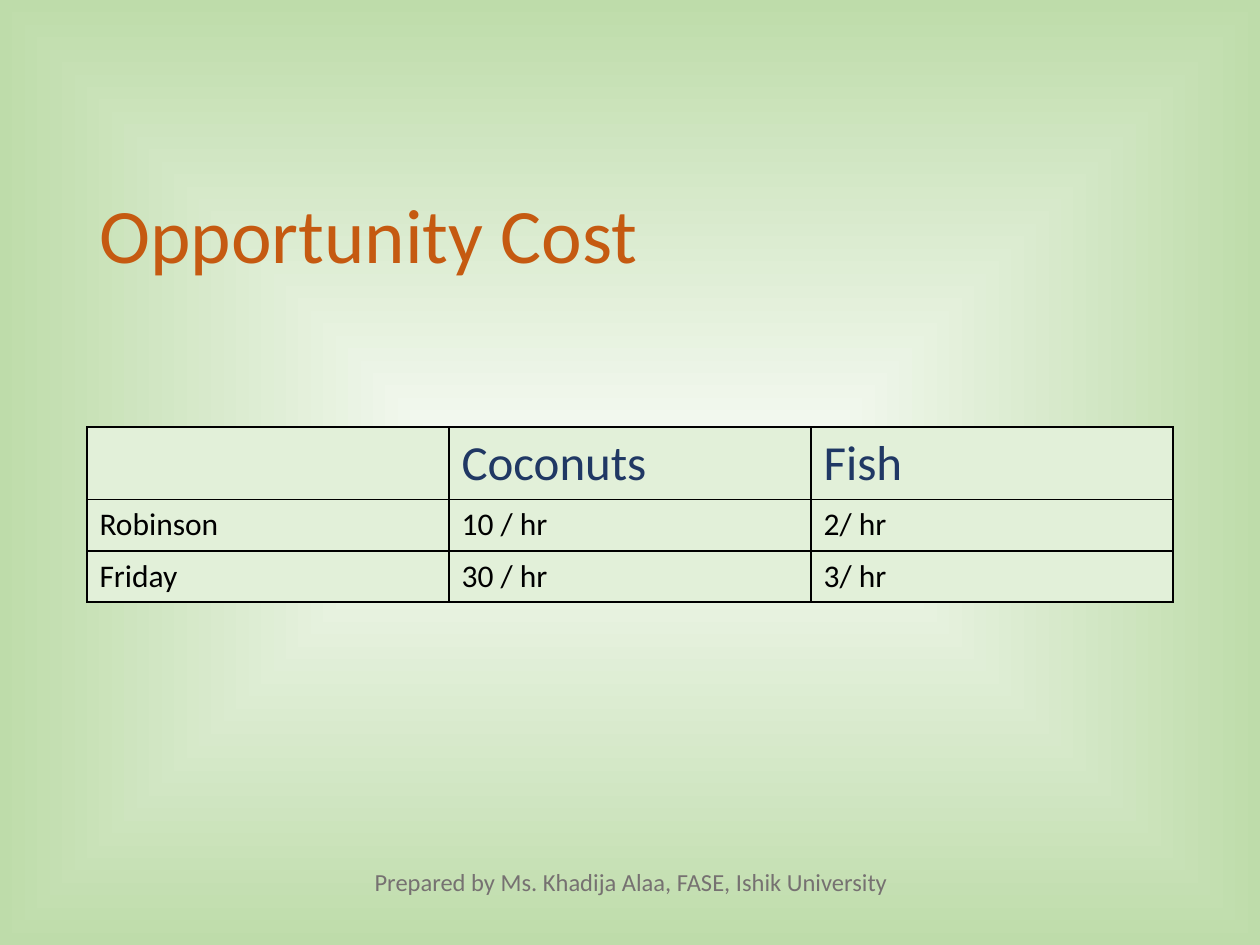
from lxml import etree
from pptx import Presentation
from pptx.dml.color import RGBColor
from pptx.enum.text import MSO_ANCHOR, PP_ALIGN
from pptx.oxml import parse_xml
from pptx.oxml.ns import nsdecls, qn
from pptx.util import Inches, Pt

MIDDLE = MSO_ANCHOR.MIDDLE
LEFT, CENTER = PP_ALIGN.LEFT, PP_ALIGN.CENTER
FONT = "Calibri"
ORANGE = RGBColor(0xC5, 0x5A, 0x11)
NAVY = RGBColor(0x20, 0x38, 0x64)
BLACK = RGBColor(0, 0, 0)
GREY = RGBColor(0x76, 0x71, 0x71)
PALE_GREEN = RGBColor(0xE2, 0xF0, 0xD9)
GLOW_CENTER = RGBColor(0xF8, 0xFB, 0xF6)
GLOW_EDGE = RGBColor(0xBE, 0xDC, 0xAA)

OUTPUT_RATES = [
    ["", "Coconuts", "Fish"],
    ["Robinson", "10 / hr", "2/ hr"],
    ["Friday", "30 / hr", "3/ hr"],
]
ROW_HEIGHTS = [0.57, 0.405, 0.405]


def format_text(paragraph, size, color, align=LEFT):
    paragraph.alignment = align
    paragraph.font.size = Pt(size)
    for run in paragraph.runs:
        run.font.name = FONT
        run.font.size = Pt(size)
        run.font.color.rgb = color


def paint_background(slide):
    slide.background.fill.gradient()
    gradient = slide.element.find(".//" + qn("a:gradFill"))
    glow = parse_xml(
        f'<a:gradFill {nsdecls("a")} rotWithShape="1"><a:gsLst>'
        f'<a:gs pos="0"><a:srgbClr val="{GLOW_CENTER}"/></a:gs>'
        f'<a:gs pos="100000"><a:srgbClr val="{GLOW_EDGE}"/></a:gs></a:gsLst>'
        '<a:path path="rect"><a:fillToRect l="50000" t="50000" r="50000" b="50000"/>'
        "</a:path></a:gradFill>"
    )
    gradient.getparent().replace(gradient, glow)


def place_title(slide, left, top, width, height):
    title = slide.shapes.title
    title.left, title.top, title.width, title.height = left, top, width, height
    title.text_frame.text = "Opportunity Cost"
    title.text_frame.vertical_anchor = MIDDLE
    heading = title.text_frame.paragraphs[0]
    heading.line_spacing = 0.9
    format_text(heading, 44, ORANGE)


def outline_cell(cell):
    properties = cell._tc.get_or_add_tcPr()
    for position, side in enumerate(("lnL", "lnR", "lnT", "lnB")):
        border = etree.Element(qn(f"a:{side}"), w=str(Pt(1)))
        solid = etree.SubElement(border, qn("a:solidFill"))
        etree.SubElement(solid, qn("a:srgbClr"), val=str(BLACK))
        properties.insert(position, border)


def place_rates_table(slide, left, top, width, height):
    rows, columns = len(OUTPUT_RATES), len(OUTPUT_RATES[0])
    rates = slide.shapes.add_table(rows, columns, left, top, width, height).table
    for column in rates.columns:
        column.width = width // columns
    for r, labels in enumerate(OUTPUT_RATES):
        rates.rows[r].height = Inches(ROW_HEIGHTS[r])
        size, color = (28, NAVY) if r == 0 else (18, BLACK)
        for c, label in enumerate(labels):
            cell = rates.cell(r, c)
            cell.text_frame.text = label
            format_text(cell.text_frame.paragraphs[0], size, color)
            for run in cell.text_frame.paragraphs[0].runs:
                run.font.bold = False
            cell.fill.solid()
            cell.fill.fore_color.rgb = PALE_GREEN
            outline_cell(cell)


def place_credit(slide, left, top, width, height):
    credit = slide.shapes.add_textbox(left, top, width, height).text_frame
    credit.word_wrap = True
    credit.margin_right = Inches(0.3)
    credit.text = "Prepared by Ms. Khadija Alaa, FASE, Ishik University"
    format_text(credit.paragraphs[0], 14, GREY, CENTER)


def main():
    presentation = Presentation()
    presentation.slide_width, presentation.slide_height = Inches(10), Inches(7.5)
    slide = presentation.slides.add_slide(presentation.slide_layouts[5])
    margin, content_width = Inches(0.69), Inches(8.62)
    paint_background(slide)
    place_title(slide, margin, Inches(1.17), content_width, Inches(1.45))
    place_rates_table(slide, margin, Inches(3.39), content_width, Inches(1.38))
    place_credit(slide, Inches(1.74), Inches(6.83), Inches(6.74), Inches(0.6))
    presentation.save("out.pptx")


if __name__ == "__main__":
    main()
